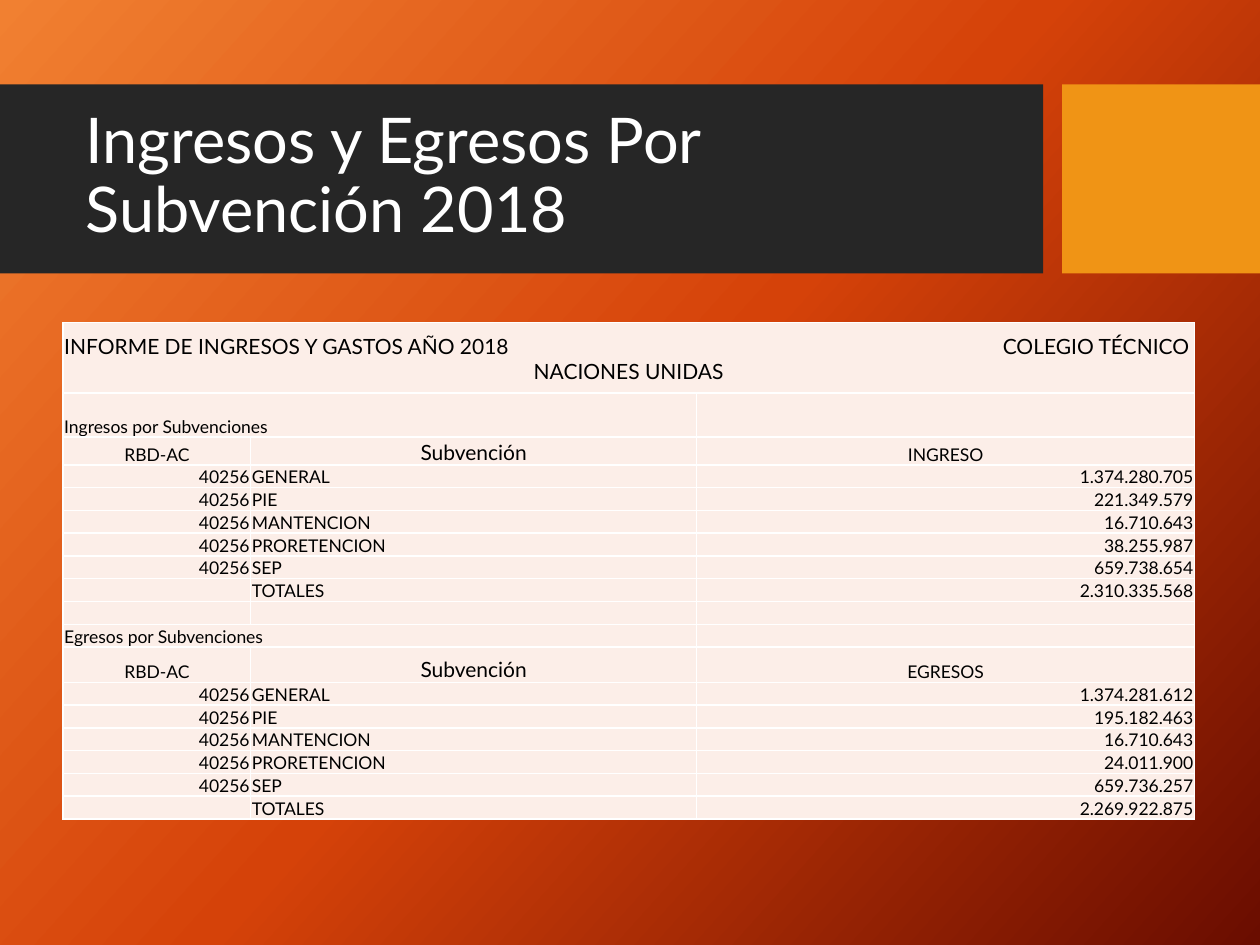
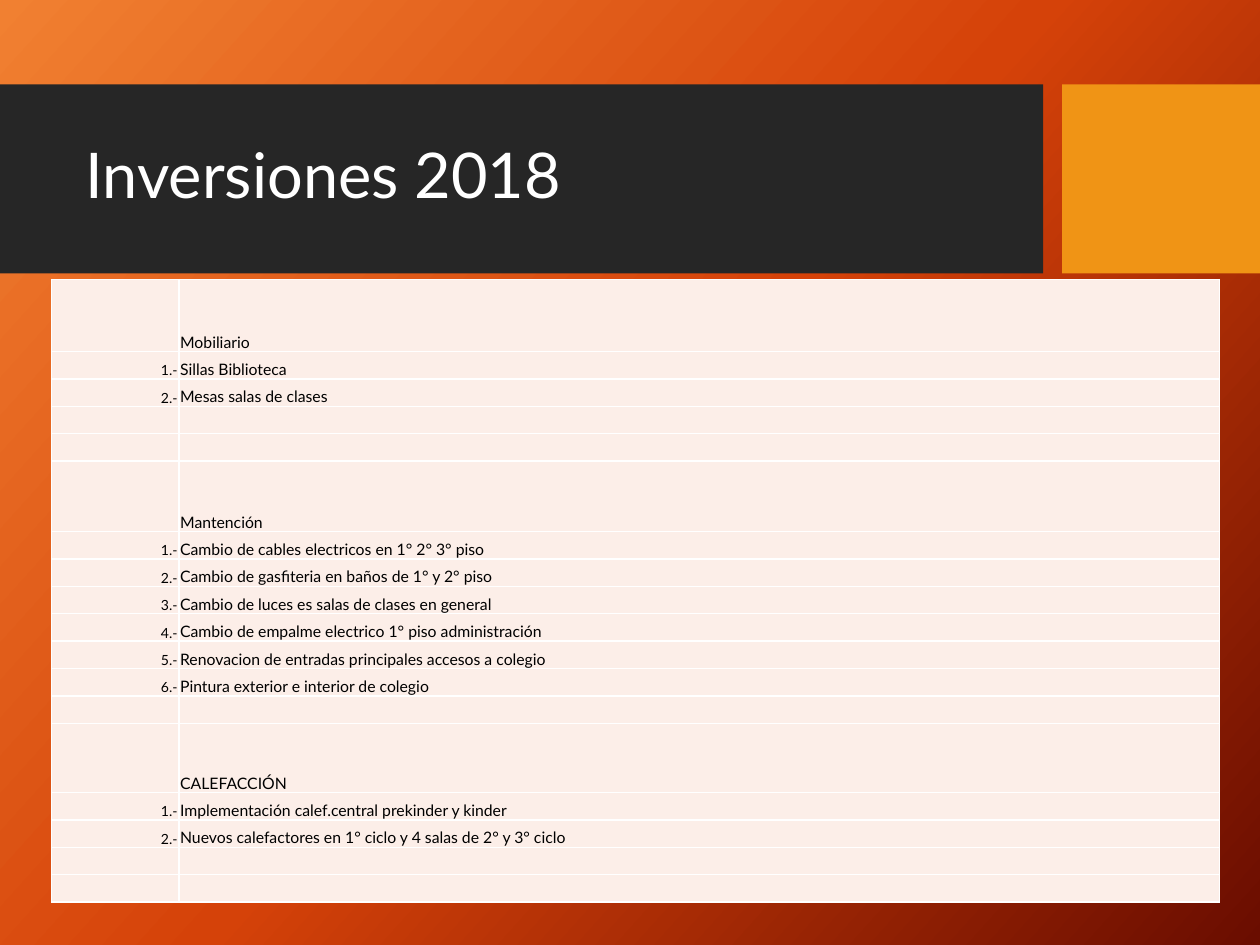
"""Build the two school finance slides: subsidy balance and investments."""
from dataclasses import dataclass, field

from lxml.etree import SubElement
from pptx import Presentation
from pptx.dml.color import RGBColor
from pptx.enum.shapes import MSO_SHAPE
from pptx.enum.text import MSO_ANCHOR, MSO_AUTO_SIZE, PP_ALIGN
from pptx.oxml.ns import qn
from pptx.presentation import Presentation as Deck
from pptx.slide import Slide
from pptx.util import Inches, Pt

FONT = "Lato"
WHITE, BLACK, CHARCOAL, AMBER, BLUSH = "FFFFFF", "000000", "262626", "F09415", "FCEEE8"
BACKDROP = ((0, "F18031"), (50, "D54209"), (100, "6A0D00"))
BACKDROP_ANGLE = 42
LEFT, CENTER, RIGHT = PP_ALIGN.LEFT, PP_ALIGN.CENTER, PP_ALIGN.RIGHT


@dataclass(frozen=True)
class Band:
    left: float
    width: float
    color: str


@dataclass(frozen=True)
class Entry:
    text: str = ""
    size: float = 10
    align: PP_ALIGN = LEFT


@dataclass
class Grid:
    left: float
    top: float
    height: float
    columns: tuple[float, ...]
    rows: list[list[Entry]]
    tall_rows: dict[int, float]
    merges: dict[int, int] = field(default_factory=dict)
    heading_tab: float = 0


BANDS = (Band(0, 8.28, CHARCOAL), Band(8.43, 1.57, AMBER))
EMPTY = Entry(size=8)


def rgb(color: str) -> RGBColor:
    return RGBColor.from_string(color)


def paint_backdrop(slide: Slide) -> None:
    fill = slide.background.fill
    fill.gradient()
    fill.gradient_angle = 360 - BACKDROP_ANGLE
    stops = next(slide.element.iter(qn("a:gsLst")))
    for stop in list(stops):
        stops.remove(stop)
    for percent, color in BACKDROP:
        stop = SubElement(stops, qn("a:gs"), pos=str(percent * 1000))
        SubElement(stop, qn("a:srgbClr"), val=color)


def add_titled_slide(deck: Deck, heading: str) -> Slide:
    slide = deck.slides.add_slide(deck.slide_layouts[5])
    paint_backdrop(slide)
    for band in BANDS:
        bar = slide.shapes.add_shape(MSO_SHAPE.RECTANGLE, Inches(band.left), Inches(0.67),
                                     Inches(band.width), Inches(1.5))
        bar.shadow.inherit = False
        bar.fill.solid()
        bar.fill.fore_color.rgb = rgb(band.color)
        bar.line.fill.background()
    title = slide.shapes.title
    title.element.getparent().append(title.element)
    title.left, title.top = Inches(0.58), Inches(0.82)
    title.width, title.height = Inches(7.54), Inches(1.18)
    frame = title.text_frame
    frame.text = heading
    frame.word_wrap = True
    frame.auto_size = MSO_AUTO_SIZE.NONE
    frame.vertical_anchor = MSO_ANCHOR.MIDDLE
    paragraph = frame.paragraphs[0]
    paragraph.alignment = LEFT
    paragraph.line_spacing = 0.9
    font = paragraph.runs[0].font
    font.name, font.size, font.color.rgb = FONT, Pt(36), rgb(WHITE)
    return slide


def write_entry(cell, entry: Entry) -> None:
    cell.fill.solid()
    cell.fill.fore_color.rgb = rgb(BLUSH)
    cell.vertical_anchor = MSO_ANCHOR.BOTTOM
    cell.margin_left = cell.margin_right = cell.margin_top = Inches(0.01)
    cell.margin_bottom = 0
    if not entry.text:
        return
    cell.text_frame.text = entry.text
    for paragraph in cell.text_frame.paragraphs:
        paragraph.alignment = entry.align
        for run in paragraph.runs:
            run.font.name, run.font.size = FONT, Pt(entry.size)
            run.font.color.rgb = rgb(BLACK)


def finish_cells(table_element) -> None:
    for properties in table_element.iter(qn("a:tcPr")):
        for position, side in enumerate(("a:lnL", "a:lnR", "a:lnT", "a:lnB")):
            line = SubElement(properties, qn(side), w=str(Pt(1)))
            fill = SubElement(line, qn("a:solidFill"))
            SubElement(fill, qn("a:srgbClr"), val=WHITE)
            properties.insert(position, line)
    for paragraph in table_element.iter(qn("a:p")):
        if paragraph.find(qn("a:r")) is None:
            SubElement(paragraph, qn("a:endParaRPr"), sz=str(EMPTY.size * 100))


def spread_heading(cell, tab: float) -> None:
    cell.vertical_anchor = MSO_ANCHOR.MIDDLE
    report, school = cell.text_frame.paragraphs
    school.alignment = CENTER
    properties = next(cell.text_frame.paragraphs[0].runs[0].font.fill and
                      report._p.iter(qn("a:pPr")))
    stops = SubElement(properties, qn("a:tabLst"))
    SubElement(stops, qn("a:tab"), pos=str(Inches(tab)), algn="r")


def draw_grid(slide: Slide, grid: Grid) -> None:
    holder = slide.shapes.add_table(len(grid.rows), len(grid.columns), Inches(grid.left),
                                    Inches(grid.top), Inches(sum(grid.columns)),
                                    Inches(grid.height))
    table = holder.table
    table.first_row = table.horz_banding = False
    for column, width in zip(table.columns, grid.columns):
        column.width = Inches(width)
    short_rows = len(grid.rows) - len(grid.tall_rows)
    short_height = (grid.height - sum(grid.tall_rows.values())) / short_rows
    for r, entries in enumerate(grid.rows):
        table.rows[r].height = Inches(grid.tall_rows.get(r, short_height))
        for c, entry in enumerate(entries):
            write_entry(table.cell(r, c), entry)
    for r, span in grid.merges.items():
        table.cell(r, 0).merge(table.cell(r, span - 1))
    if grid.heading_tab:
        spread_heading(table.cell(0, 0), grid.heading_tab)
    finish_cells(holder.element)


def balance_rows(caption: str, amount_label: str, amounts: tuple[str, ...],
                 total: str) -> list[list[Entry]]:
    subsidies = ("GENERAL", "PIE", "MANTENCION", "PRORETENCION", "SEP")
    return [
        [Entry(caption), EMPTY, EMPTY],
        [Entry("RBD-AC", align=CENTER), Entry("Subvención", 12, CENTER),
         Entry(amount_label, align=CENTER)],
        *([Entry("40256", align=RIGHT), Entry(subsidy), Entry(amount, align=RIGHT)]
          for subsidy, amount in zip(subsidies, amounts)),
        [EMPTY, Entry("TOTALES"), Entry(total, align=RIGHT)],
    ]


def investment_rows(category: str, works: tuple[str, ...], gap: int) -> list[list[Entry]]:
    return [
        [EMPTY, Entry(category, 9)],
        *([Entry(f"{number}.-", 8, RIGHT), Entry(work, 9)]
          for number, work in enumerate(works, 1)),
        *[[EMPTY, EMPTY]] * gap,
    ]


def main() -> None:
    deck = Presentation()
    deck.slide_width, deck.slide_height = Inches(10), Inches(7.5)

    heading = "INFORME DE INGRESOS Y GASTOS AÑO 2018\tCOLEGIO TÉCNICO\nNACIONES UNIDAS"
    income = balance_rows(
        "Ingresos por Subvenciones", "INGRESO",
        ("1.374.280.705", "221.349.579", "16.710.643", "38.255.987", "659.738.654"),
        "2.310.335.568")
    expenses = balance_rows(
        "Egresos por Subvenciones", "EGRESOS",
        ("1.374.281.612", "195.182.463", "16.710.643", "24.011.900", "659.736.257"),
        "2.269.922.875")
    balance = [[Entry(heading, 12), EMPTY, EMPTY], *income, [EMPTY] * 3, *expenses]
    draw_grid(add_titled_slide(deck, "Ingresos y Egresos Por Subvención 2018"),
              Grid(0.5, 2.56, 3.94, (1.49, 3.54, 3.95), balance,
                   {0: 0.56, 1: 0.35, 2: 0.22, 11: 0.28}, {0: 3, 1: 2, 10: 2}, 8.93))

    investments = [
        *investment_rows("Mobiliario", ("Sillas Biblioteca", "Mesas salas de clases"), 2),
        *investment_rows("Mantención", (
            "Cambio de cables electricos en 1° 2° 3° piso",
            "Cambio de gasfiteria en baños de 1° y 2° piso",
            "Cambio de luces es salas de clases en general",
            "Cambio de empalme electrico 1° piso administración",
            "Renovacion de entradas principales accesos a colegio",
            "Pintura exterior e interior de colegio"), 1),
        *investment_rows("CALEFACCIÓN", (
            "Implementación calef.central prekinder y kinder",
            "Nuevos calefactores en 1° ciclo y 4 salas de 2° y 3° ciclo"), 2),
    ]
    draw_grid(add_titled_slide(deck, "Inversiones 2018"),
              Grid(0.41, 2.22, 4.94, (1.01, 8.26), investments,
                   {0: 0.57, 5: 0.56, 13: 0.55}))
    deck.save("out.pptx")


if __name__ == "__main__":
    main()
